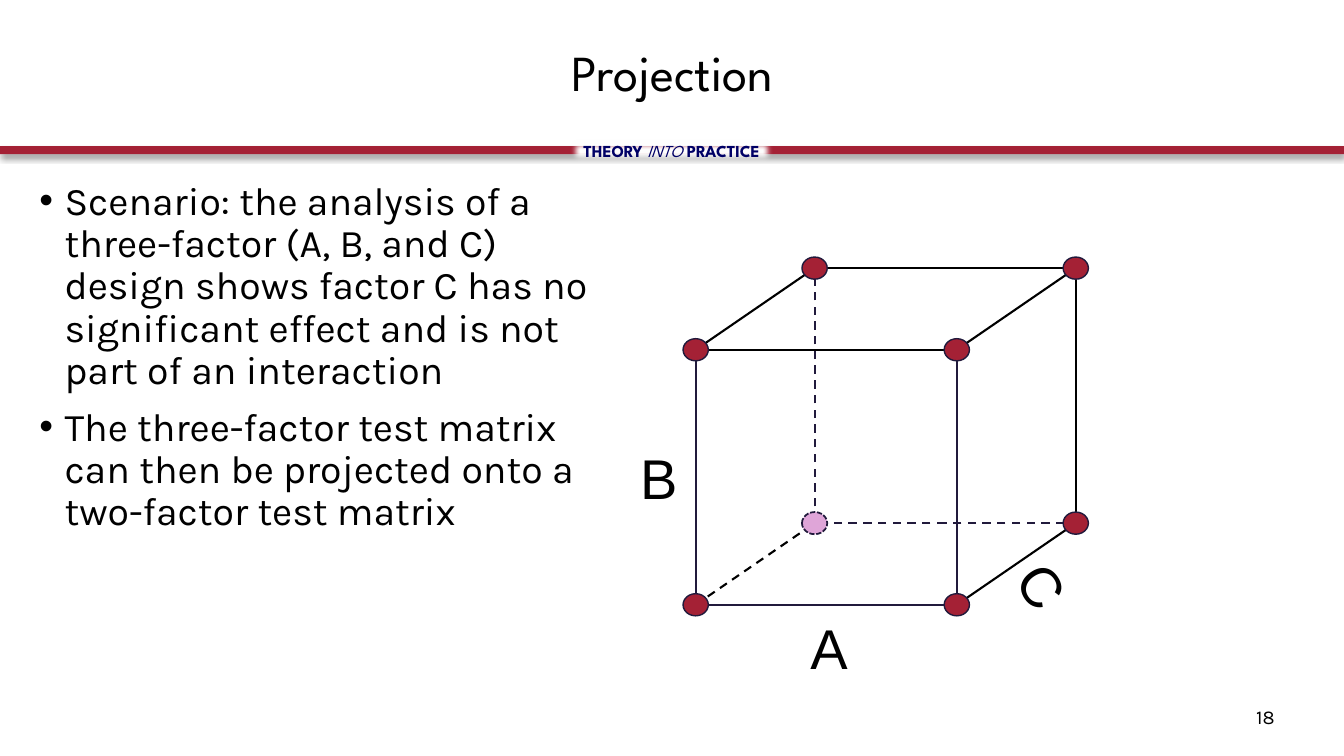
from itertools import product
from lxml.etree import SubElement as Sub
from pptx import Presentation
from pptx.dml.color import RGBColor
from pptx.enum.dml import MSO_LINE as Dash
from pptx.enum.shapes import MSO_CONNECTOR as Link, MSO_SHAPE as Kind
from pptx.enum.text import MSO_ANCHOR as Anchor, MSO_AUTO_SIZE as Fit, PP_ALIGN as Align
from pptx.oxml.ns import qn
from pptx.util import Inches, Pt

RED = RGBColor(0xA4, 0x21, 0x35)
INK = RGBColor(0x21, 0x1A, 0x3C)
PINK = RGBColor(0xDF, 0xA5, 0xD8)
NAVY = RGBColor(0x00, 0x00, 0x66)
BLACK = RGBColor(0, 0, 0)
WHITE = RGBColor(0xFF, 0xFF, 0xFF)

TITLE = "Projection"
POINTS = [
    "Scenario: the analysis of a three-factor (A, B, and C) design shows factor C "
    "has no significant effect and is not part of an interaction",
    "The three-factor test matrix can then be projected onto a two-factor test matrix",
]
MOTTO = [("THEORY ", True, False), ("INTO", False, True), (" PRACTICE", True, False)]
PAGE = "18"
LABELS = [("A", 59.56, 80.53, 0), ("C", 75.54, 71.87, 55.3), ("B", 46.89, 58, 0)]

LEFT, TOP, WIDE, HIGH = 51.76, 46.27, 19.43, 33.73
DEEP, RISE = 8.85, -10.8
DOT_W, DOT_H = 1.88, 2.93
HIDDEN = (0, 1, 1)
EDGES = [
    ((0, 0, 0), (0, 0, 1)), ((1, 0, 0), (1, 0, 1)),
    ((1, 1, 0), (1, 1, 1)), ((0, 1, 0), HIDDEN),
    ((0, 0, 0), (1, 0, 0)), ((0, 0, 1), (1, 0, 1)),
    ((1, 1, 1), (1, 0, 1)),
]

deck = Presentation()
deck.slide_width, deck.slide_height = Inches(13.33), Inches(7.5)
COL, ROW = deck.slide_width / 100, deck.slide_height / 100
slide = deck.slides.add_slide(deck.slide_layouts[1])
shapes = slide.shapes


def area(x, y, w, h):
    return int(x * COL), int(y * ROW), int(w * COL), int(h * ROW)


def place(item, *box):
    item.left, item.top, item.width, item.height = area(*box)
    return item


def write(item, paras, font="Karla", size=28, color=BLACK, align=Align.LEFT,
          space=None, gap=0, bullet=False, anchor=Anchor.TOP, fit=Fit.NONE, wrap=True):
    frame = item.text_frame
    frame.word_wrap, frame.auto_size, frame.vertical_anchor = wrap, fit, anchor
    for n, runs in enumerate(paras):
        para = frame.add_paragraph() if n else frame.paragraphs[0]
        para.alignment, para.line_spacing = align, space
        para.space_before = Pt(gap if n else 0)
        if bullet:
            props = para._p.get_or_add_pPr()
            props.set("marL", str(Inches(0.25)))
            props.set("indent", str(-Inches(0.25)))
            Sub(props, qn("a:buFont"), typeface="Arial")
            Sub(props, qn("a:buChar"), char="•")
        for text, bold, slant in runs:
            run = para.add_run()
            run.text = text
            face = run.font
            face.name, face.size, face.bold, face.italic = font, Pt(size), bold, slant
            face.color.rgb = color


def plain(text):
    return [(text, False, False)]


def draw(kind, box, fill=None, line=None, width=1.5, dash=None):
    item = shapes.add_shape(kind, *area(*box))
    item.shadow.inherit = False
    if fill is None:
        item.fill.background()
    else:
        item.fill.solid()
        item.fill.fore_color.rgb = fill
    if line is None:
        item.line.fill.background()
    else:
        item.line.color.rgb = line
        item.line.width = Pt(width)
        item.line.dash_style = dash
    return item


def corner(i, j, k):
    return LEFT + i * WIDE + k * DEEP, TOP + j * HIGH + k * RISE


def join(a, b):
    (x, y), (p, q) = corner(*a), corner(*b)
    edge = shapes.add_connector(
        Link.STRAIGHT, int(x * COL), int(y * ROW), int(p * COL), int(q * ROW))
    edge.line.color.rgb = BLACK
    edge.line.width = Pt(1.5)
    if HIDDEN in (a, b):
        edge.line.dash_style = Dash.DASH
    Sub(edge._element.spPr, qn("a:effectLst"))


def effects(item):
    return item._element.spPr.find(qn("a:effectLst"))


bar = draw(Kind.RECTANGLE, (0, 19.33, 100, 1.07), RED)
shade = Sub(effects(bar), qn("a:outerShdw"), blurRad=str(Pt(4)), dist=str(Pt(3)),
            dir="5400000", algn="t", rotWithShape="0")
Sub(Sub(shade, qn("a:srgbClr"), val="000000"), qn("a:alpha"), val="40000")

motto = draw(Kind.RECTANGLE, (42.24, 18, 15.45, 3.87), WHITE)
Sub(effects(motto), qn("a:softEdge"), rad=str(Pt(5)))
write(motto, [MOTTO], font="League Spartan", size=12, color=NAVY,
      align=Align.CENTER, fit=Fit.SHAPE_TO_FIT_TEXT, wrap=False)

write(place(shapes.title, 18, 2.67, 64.07, 14.67), [plain(TITLE)],
      font="League Spartan", size=36, align=Align.CENTER, space=0.9, anchor=Anchor.MIDDLE)
write(place(slide.placeholders[1], 2.18, 23.33, 42.76, 66),
      [plain(p) for p in POINTS], space=0.9, gap=10, bullet=True)
write(shapes.add_textbox(*area(92.72, 92.53, 4.8, 4.4)), [plain(PAGE)], size=14)

for k, dash in ((1, Dash.DASH), (0, None)):
    draw(Kind.RECTANGLE, (*corner(0, 0, k), WIDE, HIGH), line=INK, dash=dash)
for a, b in EDGES:
    join(a, b)
for spot in product((0, 1), repeat=3):
    x, y = corner(*spot)
    look = (PINK, INK, 1.25, Dash.SQUARE_DOT) if spot == HIDDEN else (RED, INK, 1)
    draw(Kind.OVAL, (x - DOT_W / 2, y - DOT_H / 2, DOT_W, DOT_H), *look)

for name, x, y, turn in LABELS:
    label = shapes.add_textbox(*area(x, y, 3.83, 10.27))
    label.rotation = turn
    write(label, [plain(name)], font="Arial", size=40, fit=Fit.SHAPE_TO_FIT_TEXT)

deck.save("out.pptx")
